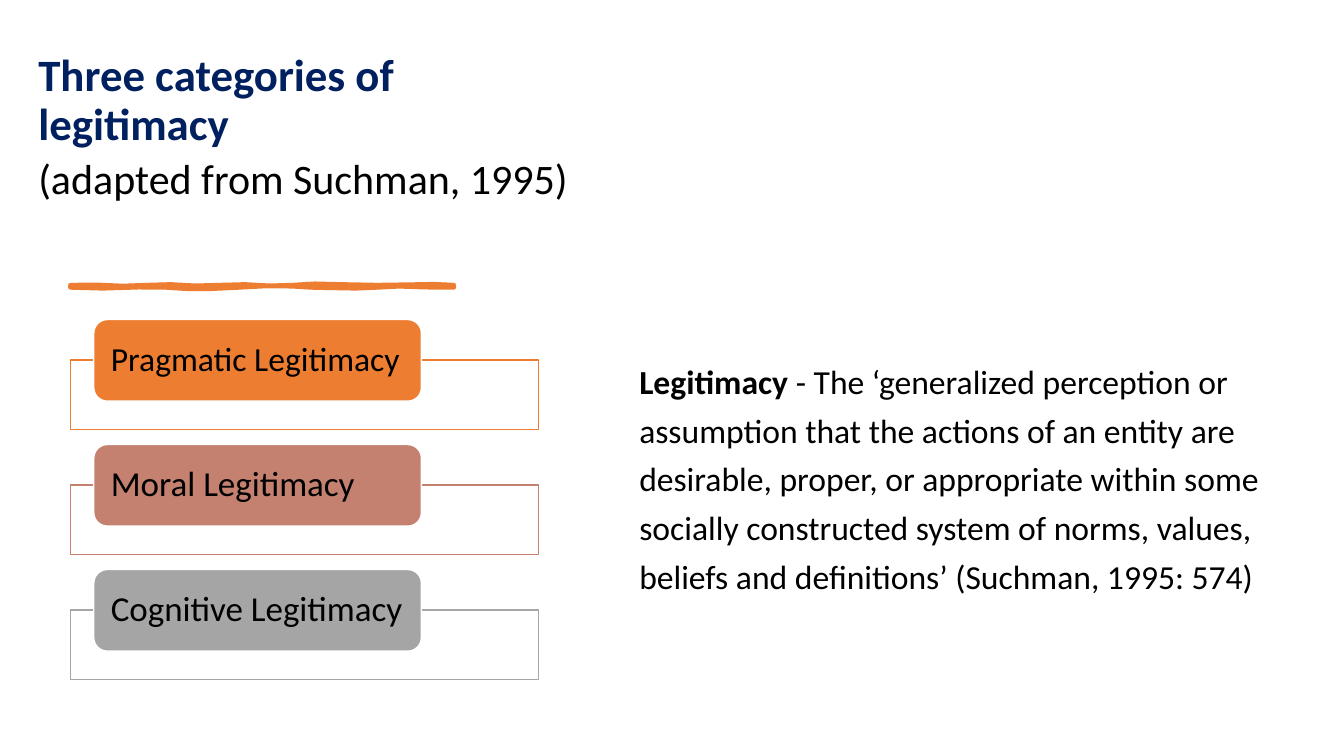
"""Build the slide on three categories of legitimacy."""
from lxml.etree import SubElement
from pptx import Presentation
from pptx.dml.color import RGBColor
from pptx.enum.shapes import MSO_SHAPE
from pptx.enum.text import MSO_ANCHOR, MSO_AUTO_SIZE, PP_ALIGN
from pptx.oxml.ns import qn
from pptx.util import Inches, Pt

FONT = "Calibri"
BLACK, WHITE, NAVY, ORANGE = "000000", "FFFFFF", "002060", "ED7D31"
TITLE = [("Three categories of legitimacy", 32, NAVY, True),
         ("(adapted from Suchman, 1995)", 30, BLACK, False)]
TERM = "Legitimacy "
DEFINITION = ["- The ‘generalized perception or",
              "assumption that the actions of an entity are",
              "desirable, proper, or appropriate within some",
              "socially constructed system of norms, values,",
              "beliefs and definitions’ (Suchman, 1995: 574)"]
CATEGORIES = [("Pragmatic Legitimacy", 24, ORANGE),
              ("Moral Legitimacy", 25, "C48170"),
              ("Cognitive Legitimacy", 25, "A5A5A5")]
CATEGORY_TOP, CATEGORY_STEP, FRAME_DROP = 3.17, 1.24, 0.4
BRUSH_START = (0.7, 2.83)
BRUSH_CURVES = [
    [(0.95, 2.81), (1.24, 2.86), (1.46, 2.83)],
    [(1.68, 2.8), (1.94, 2.86), (2.18, 2.83)],
    [(2.43, 2.8), (2.69, 2.86), (2.9, 2.83)],
    [(3.12, 2.8), (3.33, 2.83), (3.74, 2.83)],
    [(4.15, 2.83), (4.29, 2.81), (4.5, 2.83)],
    [(4.5, 2.84), (4.5, 2.84), (4.5, 2.85)],
    [(4.24, 2.86), (3.92, 2.82), (3.74, 2.85)],
    [(3.56, 2.87), (3.26, 2.85), (3.09, 2.85)],
    [(2.93, 2.84), (2.69, 2.82), (2.37, 2.85)],
    [(2.06, 2.87), (1.84, 2.87), (1.65, 2.85)],
    [(1.46, 2.83), (0.96, 2.88), (0.7, 2.85)],
]
CURVE_STEPS = 3


def color(hex_value):
    return RGBColor.from_string(hex_value)


def place(shape, left, top, width, height):
    shape.left, shape.top = Inches(left), Inches(top)
    shape.width, shape.height = Inches(width), Inches(height)


def format_run(run, size, hex_value=BLACK, bold=False):
    run.font.name, run.font.size, run.font.bold = FONT, Pt(size), bold
    run.font.color.rgb = color(hex_value)


def format_paragraph(paragraph, line_spacing):
    paragraph.alignment = PP_ALIGN.LEFT
    paragraph.line_spacing = line_spacing
    paragraph.space_before, paragraph.space_after = Pt(0), Pt(6)


def paint(shape, fill, line, line_width):
    shape.shadow.inherit = False
    shape.fill.solid()
    shape.fill.fore_color.rgb = color(fill)
    shape.line.color.rgb = color(line)
    shape.line.width = Pt(line_width)


def add_title(slide):
    title = slide.shapes.title
    place(title, 0.28, 0.73, 5.66, 1.34)
    frame = title.text_frame
    frame.auto_size = MSO_AUTO_SIZE.NONE
    frame.vertical_anchor = MSO_ANCHOR.BOTTOM
    frame.text = "\n".join(text for text, *_ in TITLE)
    for paragraph, (_, size, hex_value, bold) in zip(frame.paragraphs, TITLE):
        format_paragraph(paragraph, 0.9)
        format_run(paragraph.runs[0], size, hex_value, bold)


def add_definition(slide):
    body = slide.placeholders[1]
    place(body, 6.24, 3.53, 6.48, 2.84)
    frame = body.text_frame
    frame.auto_size = MSO_AUTO_SIZE.NONE
    frame.word_wrap = False
    frame.text = "\n".join([TERM] + DEFINITION[1:])
    frame.paragraphs[0].add_run().text = DEFINITION[0]
    for paragraph in frame.paragraphs:
        format_paragraph(paragraph, 1.0)
        properties = paragraph._p.get_or_add_pPr()
        properties.set("marL", "0")
        properties.set("indent", "0")
        SubElement(properties, qn("a:buNone"))
        for run in paragraph.runs:
            format_run(run, 24, bold=run.text == TERM)


def curve_points(start, curves):
    for first, second, end in curves:
        for step in range(1, CURVE_STEPS + 1):
            t = step / CURVE_STEPS
            yield tuple(Inches((1 - t) ** 3 * a + 3 * (1 - t) ** 2 * t * b
                               + 3 * (1 - t) * t ** 2 * c + t ** 3 * d)
                        for a, b, c, d in zip(start, first, second, end))
        start = end


def add_brush_stroke(slide):
    left, top = BRUSH_START
    builder = slide.shapes.build_freeform(Inches(left), Inches(top))
    builder.add_line_segments(curve_points(BRUSH_START, BRUSH_CURVES), close=True)
    paint(builder.convert_to_shape(), ORANGE, ORANGE, 3.5)


def add_category(slide, top, label, size, hex_value):
    frame_box = slide.shapes.add_shape(
        MSO_SHAPE.RECTANGLE, Inches(0.7), Inches(top + FRAME_DROP), Inches(4.64), Inches(0.69))
    paint(frame_box, WHITE, hex_value, 1)
    tab = slide.shapes.add_shape(
        MSO_SHAPE.ROUNDED_RECTANGLE, Inches(0.93), Inches(top), Inches(3.25), Inches(0.81))
    paint(tab, hex_value, WHITE, 1)
    frame = tab.text_frame
    frame.margin_left, frame.margin_right = Inches(0.13), Inches(0.12)
    frame.margin_top = frame.margin_bottom = 0
    frame.vertical_anchor = MSO_ANCHOR.MIDDLE
    frame.word_wrap = True
    frame.text = label
    paragraph = frame.paragraphs[0]
    paragraph.alignment, paragraph.line_spacing = PP_ALIGN.LEFT, 0.9
    format_run(paragraph.runs[0], size)


def main():
    presentation = Presentation()
    presentation.slide_width, presentation.slide_height = Inches(13.33), Inches(7.5)
    slide = presentation.slides.add_slide(presentation.slide_layouts[1])
    add_title(slide)
    add_brush_stroke(slide)
    add_definition(slide)
    for index, category in enumerate(CATEGORIES):
        add_category(slide, CATEGORY_TOP + index * CATEGORY_STEP, *category)
    presentation.save("out.pptx")


if __name__ == "__main__":
    main()
